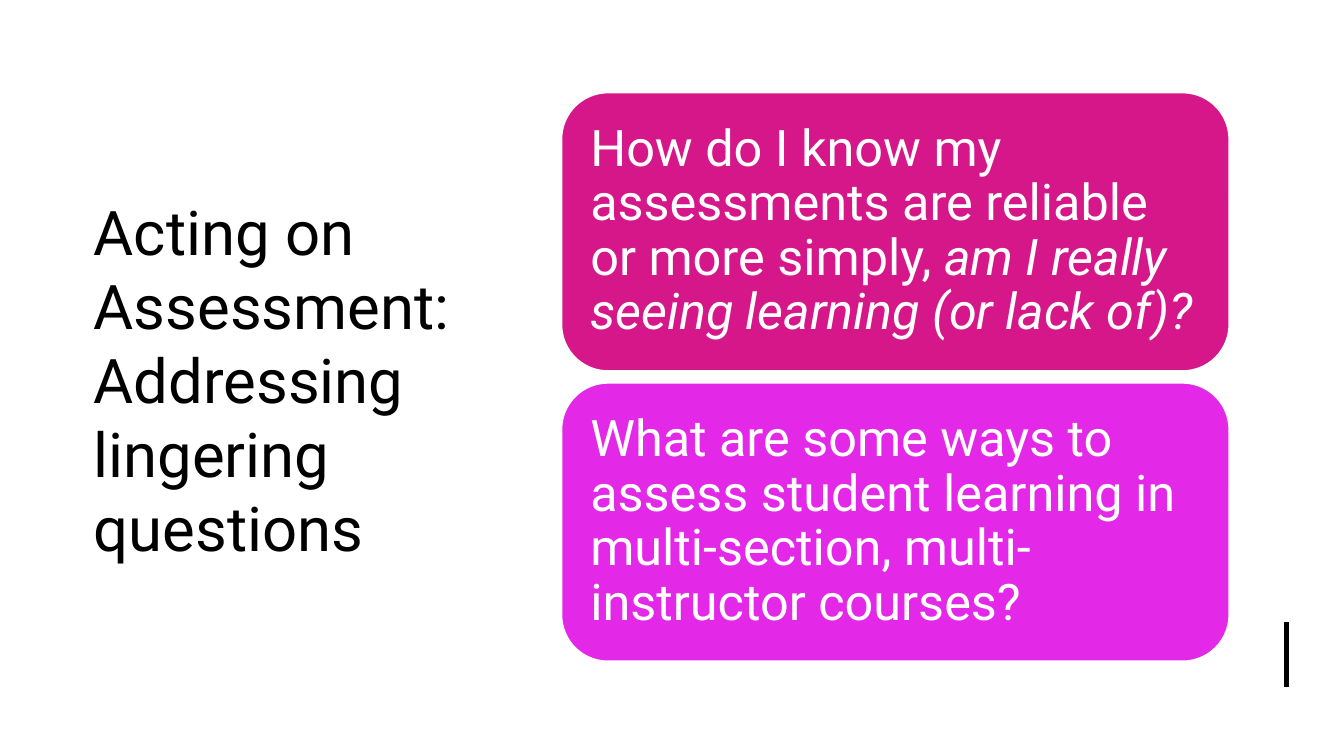
"""Build a slide with a title and two question cards."""
from dataclasses import dataclass

from lxml import etree
from pptx import Presentation
from pptx import util as u
from pptx.dml.color import RGBColor
from pptx.enum import shapes, text
from pptx.oxml.ns import qn
from pptx.slide import Slide
from pptx.text.text import TextFrame, _Paragraph

COLORS = {"white": "FFFFFF", "black": "000000", "pink": "D51789", "magenta": "E329E7"}
FONT = "Roboto"
CARD_LEFT, CARD_TOP, CARD_WIDTH, CARD_HEIGHT = 5.57, 0.92, 6.62, 2.76
CARD_STEP = 2.88
CARD_INSET = u.Inches(0.15)


@dataclass
class Card:
    """A question card with an optional italic ending."""
    color: str
    question: str
    emphasis: str = ""


CARDS = [
    Card("pink", "How do I know my assessments are reliable or more simply, ",
         "am I really seeing learning (or lack of)?"),
    Card("magenta", "What are some ways to assess student learning in "
                    "multi-section, multi-instructor courses?"),
]


def rgb(name: str) -> RGBColor:
    """Return the named colour."""
    return RGBColor.from_string(COLORS[name])


def format_frame(frame: TextFrame, **values: object) -> None:
    """Apply the shared frame settings and any extra values."""
    settings = {"word_wrap": True, "auto_size": text.MSO_AUTO_SIZE.NONE,
                "vertical_anchor": text.MSO_ANCHOR.MIDDLE, **values}
    for name, value in settings.items():
        setattr(frame, name, value)


def add_run(paragraph: _Paragraph, words: str, size: int, color: str,
            italic: bool = False) -> None:
    """Add a formatted run to a left-aligned paragraph."""
    paragraph.alignment = text.PP_ALIGN.LEFT
    run = paragraph.add_run()
    run.text = words
    values = {"name": FONT, "size": u.Pt(size), "italic": italic}
    for name, value in values.items():
        setattr(run.font, name, value)
    run.font.color.rgb = rgb(color)


def add_title(slide: Slide, words: str) -> None:
    """Place and fill the title placeholder."""
    title = slide.shapes.title
    place = {"left": 0.83, "top": 0.94, "width": 3.77, "height": 5.64}
    for name, value in place.items():
        setattr(title, name, u.Inches(value))
    format_frame(title.text_frame)
    paragraph = title.text_frame.paragraphs[0]
    paragraph.line_spacing = 1.0
    add_run(paragraph, words, 44, "black")


def add_card(slide: Slide, card: Card, index: int) -> None:
    """Draw one rounded question card."""
    shape = slide.shapes.add_shape(
        shapes.MSO_SHAPE.ROUNDED_RECTANGLE, u.Inches(CARD_LEFT),
        u.Inches(CARD_TOP + index * CARD_STEP),
        u.Inches(CARD_WIDTH), u.Inches(CARD_HEIGHT))
    shape.shadow.inherit = False
    shape.fill.solid()
    shape.fill.fore_color.rgb = rgb(card.color)
    shape.line.color.rgb = rgb("white")
    shape.line.width = u.Pt(1)
    sides = ("left", "top", "right", "bottom")
    format_frame(shape.text_frame, **{f"margin_{side}": CARD_INSET for side in sides})
    paragraph = shape.text_frame.paragraphs[0]
    paragraph.line_spacing = 0.9
    add_run(paragraph, card.question, 36, "white")
    if card.emphasis:
        add_run(paragraph, card.emphasis, 36, "white", italic=True)


def add_accent(slide: Slide) -> None:
    """Draw the short vertical line at the lower right."""
    x = u.Inches(12.76)
    accent = slide.shapes.add_connector(
        shapes.MSO_CONNECTOR.STRAIGHT, x, u.Inches(6.17), x, u.Inches(6.82))
    accent.line.color.rgb = rgb("black")
    accent.line.width = u.Pt(3)
    etree.SubElement(accent._element.spPr, qn("a:effectLst"))


def main() -> None:
    """Create and save the presentation."""
    presentation = Presentation()
    presentation.slide_width = u.Inches(13.33)
    presentation.slide_height = u.Inches(7.5)
    slide = presentation.slides.add_slide(presentation.slide_layouts.get_by_name("Title Only"))
    slide.background.fill.solid()
    slide.background.fill.fore_color.rgb = rgb("white")
    add_title(slide, "Acting on Assessment: Addressing lingering questions")
    add_accent(slide)
    for index, card in enumerate(CARDS):
        add_card(slide, card, index)
    presentation.save("out.pptx")


if __name__ == "__main__":
    main()
